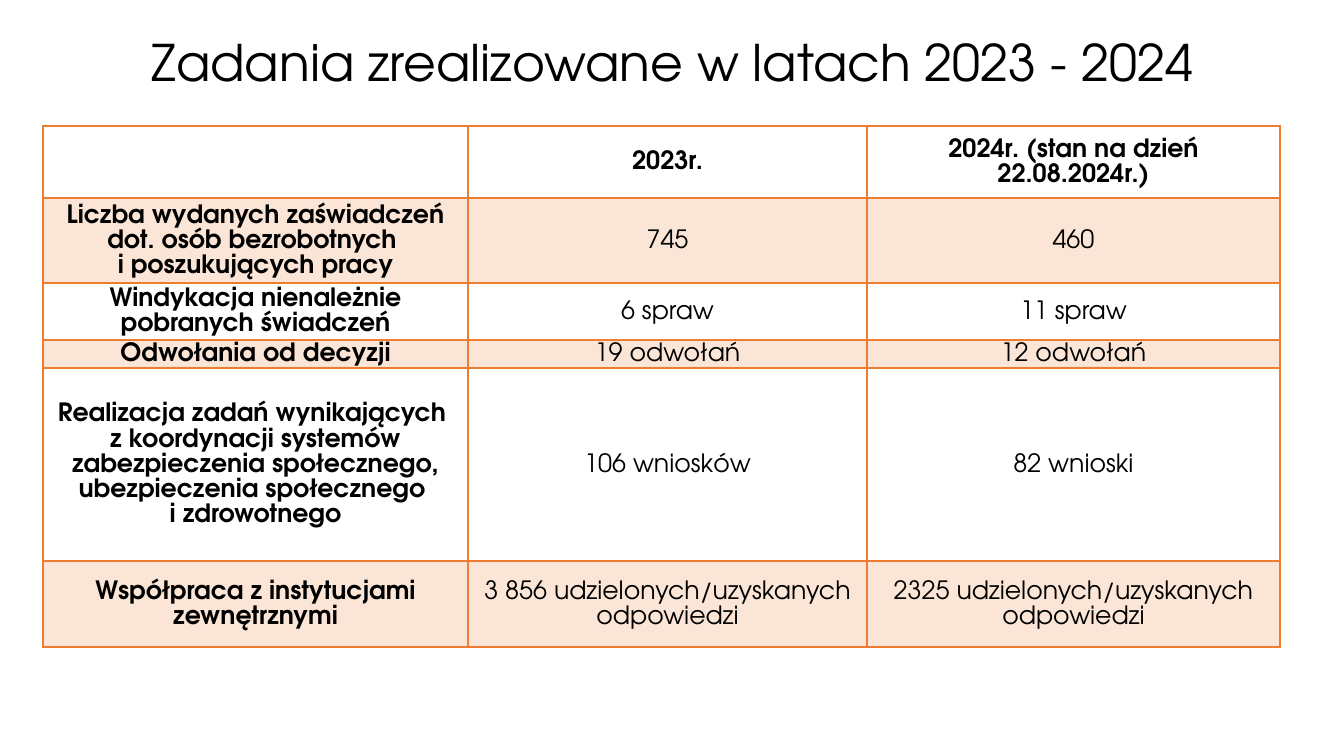
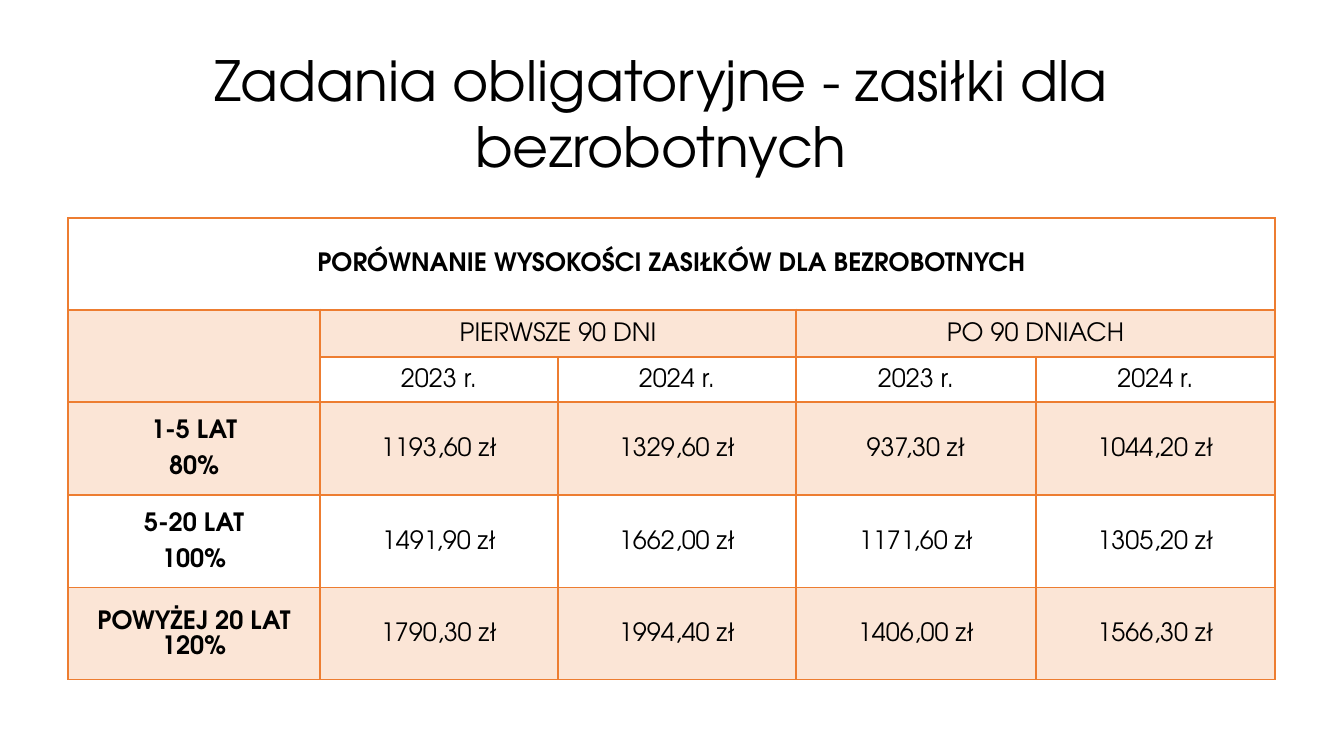
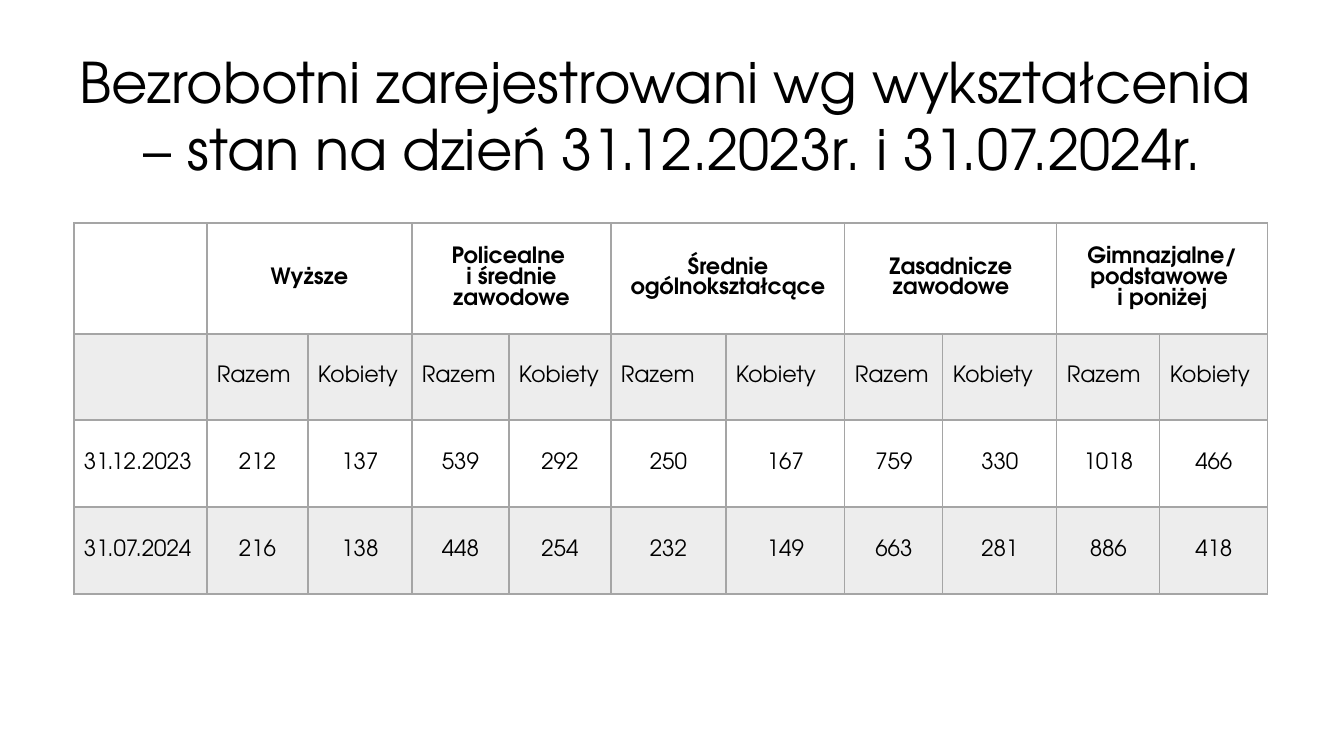
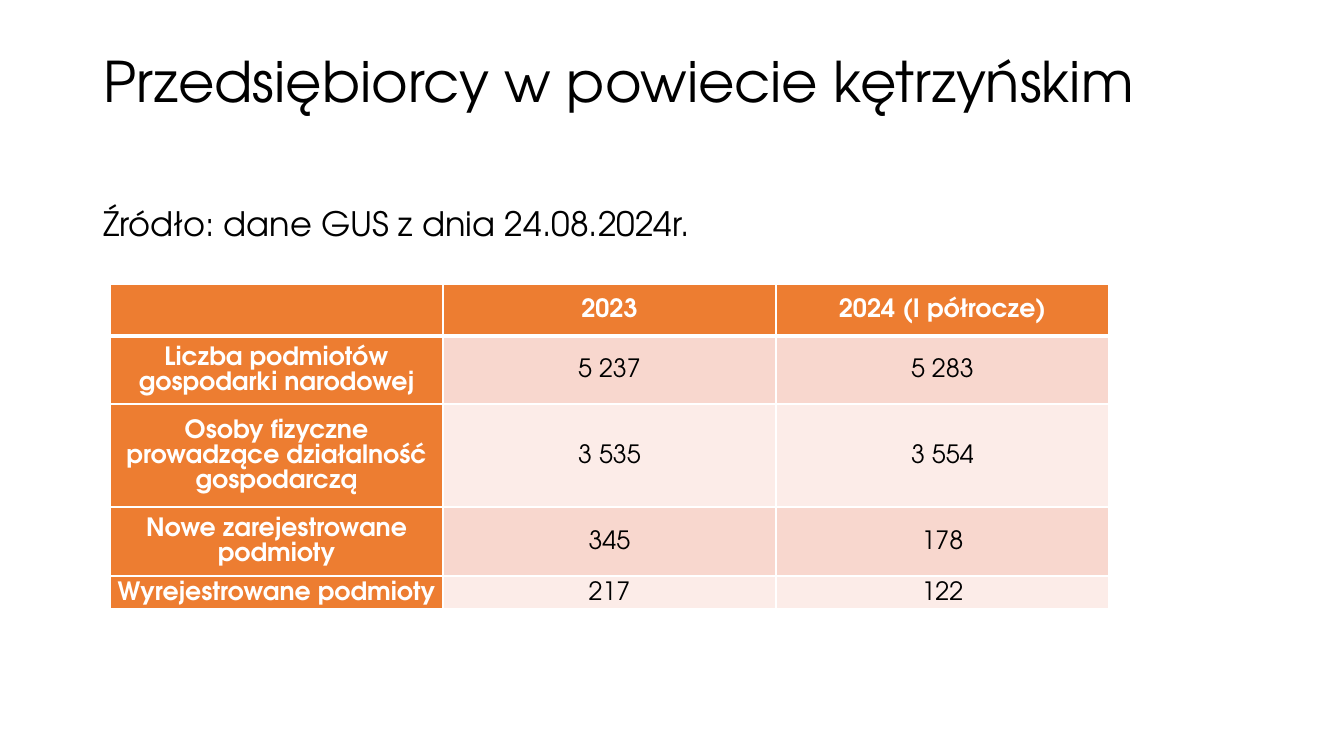
"""Builds four slides of tables about a county labour office."""
from dataclasses import dataclass

from lxml.etree import SubElement
from pptx import Presentation
from pptx.dml.color import RGBColor
from pptx.enum.text import MSO_ANCHOR as Anchor, MSO_AUTO_SIZE as AutoSize, PP_ALIGN as Align
from pptx.oxml import parse_xml
from pptx.oxml.ns import nsdecls, qn
from pptx.util import Emu, Pt


@dataclass(frozen=True)
class Theme:
    font: str = "TeX Gyre Adventor"
    ink: str = "000000"
    paper: str = "FFFFFF"
    orange: str = "ED7D31"
    orange_tint: str = "FBE5D6"
    gray: str = "A5A5A5"
    gray_tint: str = "EDEDED"
    rose: str = "F8D7CE"
    rose_tint: str = "FCECE8"
    title_leading: float = 1.19
    source_size: int = 24
    source_leading: int = 26
    rule: int = 1


THEME = Theme()
WIDTH, HEIGHT = 1344, 756
EMU_PER_PX = 914400 / 100.8
LAYOUT_BODY, LAYOUT_TITLE = 1, 5


@dataclass(frozen=True)
class Look:
    border: str
    bands: tuple
    header_rule: int = 2
    solid: str = ""
    size: int = 18
    leading: float = 18
    after: int = 8
    margins: tuple = (7, 0)
    bold_labels: bool = True
    left_aligned: bool = False


ORANGE_GRID = Look(THEME.orange, (THEME.orange_tint, None))
GRAY_GRID = Look(THEME.gray, (THEME.gray_tint, None), size=16, leading=14.7, after=0,
                 margins=(10, 5), bold_labels=False, left_aligned=True)
ORANGE_SOLID = Look(THEME.paper, (THEME.rose, THEME.rose_tint), header_rule=3, solid=THEME.orange)

SLIDES = [
    dict(
        title="Zadania zrealizowane w latach 2023 - 2024\v", title_size=36,
        title_box=(64, 65, 1217, 54), look=ORANGE_GRID, corner=(43, 126),
        columns=(425, 399, 413), heights=(72, 85, 57, 28, 193, 86),
        rows=[
            ("", "2023r.", "2024r. (stan na dzień 22.08.2024r.)"),
            ("Liczba wydanych zaświadczeń dot. osób bezrobotnych \vi poszukujących pracy", "745", "460"),
            ("Windykacja nienależnie pobranych świadczeń", "6 spraw", "11 spraw"),
            ("Odwołania od decyzji", "19 odwołań", "12 odwołań"),
            ("Realizacja zadań wynikających \vz koordynacji systemów zabezpieczenia społecznego, "
             "ubezpieczenia społecznego \vi zdrowotnego", "106 wniosków", "82 wnioski"),
            ("Współpraca z instytucjami zewnętrznymi", "3 856 udzielonych/uzyskanych odpowiedzi",
             "2325 udzielonych/uzyskanych odpowiedzi"),
        ],
    ),
    dict(
        title="Zadania obligatoryjne - zasiłki dla bezrobotnych", title_size=39.6,
        title_box=(34, 40, 1254, 146), look=ORANGE_GRID, corner=(68, 218),
        columns=(252, 238, 238, 240, 239), heights=(92, 47, 45, 93, 93, 92),
        merges=[(0, 0, 0, 4), (1, 0, 2, 0), (1, 1, 1, 2), (1, 3, 1, 4)],
        rows=[
            ("PORÓWNANIE WYSOKOŚCI ZASIŁKÓW DLA BEZROBOTNYCH", "", "", "", ""),
            ("", "PIERWSZE 90 DNI", "", "PO 90 DNIACH", ""),
            ("", "2023 r.", "2024 r.", "2023 r.", "2024 r."),
            ("1-5 LAT\n80%", "1193,60 zł", "1329,60 zł", "937,30 zł", "1044,20 zł"),
            ("5-20 LAT\n100%", "1491,90 zł", "1662,00 zł", "1171,60 zł", "1305,20 zł"),
            ("POWYŻEJ 20 LAT 120%", "1790,30 zł", "1994,40 zł", "1406,00 zł", "1566,30 zł"),
        ],
    ),
    dict(
        title="Bezrobotni zarejestrowani wg wykształcenia \v– stan na dzień 31.12.2023r. i 31.07.2024r.",
        title_size=40, title_box=(66, 42, 1214, 146), look=GRAY_GRID, corner=(74, 223),
        columns=(133, 101, 104, 97, 102, 115, 119, 98, 114, 103, 108), heights=(111, 86, 87, 87),
        merges=[(0, col, 0, col + 1) for col in range(1, 11, 2)],
        rows=[
            ("", "Wyższe", "", "Policealne \vi średnie zawodowe", "", "Średnie ogólnokształcące", "",
             "Zasadnicze zawodowe", "", "Gimnazjalne/ podstawowe \vi poniżej", ""),
            ("",) + ("Razem", "Kobiety") * 5,
            ("31.12.2023", "212", "137", "539", "292", "250", "167", "759", "330", "1018", "466"),
            ("31.07.2024", "216", "138", "448", "254", "232", "149", "663", "281", "886", "418"),
        ],
    ),
    dict(
        title="Przedsiębiorcy w powiecie kętrzyńskim", title_size=40, title_align=Align.LEFT,
        title_box=(93, 38, 1159, 84), look=ORANGE_SOLID, corner=(110, 284),
        source="Źródło: dane GUS z dnia 24.08.2024r.", source_box=(93, 202, 1159, 480),
        columns=(333, 333, 333), heights=(52, 68, 103, 69, 33),
        rows=[
            ("", "2023", "2024 (I półrocze)"),
            ("Liczba podmiotów gospodarki narodowej", "5 237", "5 283"),
            ("Osoby fizyczne prowadzące działalność gospodarczą", "3 535", "3 554"),
            ("Nowe zarejestrowane podmioty", "345", "178"),
            ("Wyrejestrowane podmioty", "217", "122"),
        ],
    ),
]


def px(length):
    return Emu(round(length * EMU_PER_PX))


def write(frame, text, size, leading, align, color=THEME.ink, bold=False, after=0):
    for index, line in enumerate(text.split("\n")):
        paragraph = frame.add_paragraph() if index else frame.paragraphs[0]
        paragraph.alignment = align
        paragraph.line_spacing = Pt(leading)
        paragraph.space_before, paragraph.space_after = Pt(0), Pt(after)
        for part_index, part in enumerate(line.split("\v")):
            if part_index:
                paragraph.add_line_break()
            if part:
                run = paragraph.add_run()
                run.text = part
                run.font.name, run.font.size, run.font.bold = THEME.font, Pt(size), bold
                run.font.color.rgb = RGBColor.from_string(color)


def fill_placeholder(placeholder, box, anchor, text, size, leading, align):
    placeholder.left, placeholder.top, placeholder.width, placeholder.height = map(px, box)
    frame = placeholder.text_frame
    frame.word_wrap, frame.auto_size, frame.vertical_anchor = True, AutoSize.NONE, anchor
    write(frame, text, size, leading, align)
    return frame


def add_source(slide, text, box):
    frame = fill_placeholder(slide.placeholders[1], box, Anchor.TOP, text,
                             THEME.source_size, THEME.source_leading, Align.LEFT)
    properties = frame.paragraphs[0]._p.get_or_add_pPr()
    properties.set("marL", "0")
    properties.set("indent", "0")
    SubElement(properties, qn("a:buNone"))


def draw_borders(cell, look, row):
    rules = {"L": THEME.rule, "R": THEME.rule,
             "T": look.header_rule if row == 1 else THEME.rule,
             "B": look.header_rule if row == 0 else THEME.rule}
    properties = cell._tc.get_or_add_tcPr()
    for side, width in rules.items():
        properties.append(parse_xml(
            f'<a:ln{side} {nsdecls("a")} w="{Pt(width)}"><a:solidFill>'
            f'<a:srgbClr val="{look.border}"/></a:solidFill></a:ln{side}>'))


def style_cell(cell, look, row, col, text):
    header, label = row == 0, col == 0
    solid = look.solid if header or label else ""
    draw_borders(cell, look, row)
    color = solid or (None if header else look.bands[(row - 1) % 2])
    if color:
        cell.fill.solid()
        cell.fill.fore_color.rgb = RGBColor.from_string(color)
    else:
        cell.fill.background()
    side, edge = map(px, look.margins)
    cell.margin_left = cell.margin_right = side
    cell.margin_top = cell.margin_bottom = edge
    cell.vertical_anchor = Anchor.MIDDLE
    left = look.left_aligned and (row == 1 or label)
    write(cell.text_frame, text, look.size, look.leading, Align.LEFT if left else Align.CENTER,
          THEME.paper if solid else THEME.ink, header or (label and look.bold_labels), look.after)


def add_grid(slide, look, corner, columns, heights, rows, merges=()):
    table = slide.shapes.add_table(len(rows), len(columns), *map(px, corner),
                                   px(sum(columns)), px(sum(heights))).table
    table.first_row = table.horz_banding = False
    for column, width in zip(table.columns, columns):
        column.width = px(width)
    for table_row, height in zip(table.rows, heights):
        table_row.height = px(height)
    for row, texts in enumerate(rows):
        for col, text in enumerate(texts):
            style_cell(table.cell(row, col), look, row, col, text)
    for top, left, bottom, right in merges:
        table.cell(top, left).merge(table.cell(bottom, right))


def main():
    deck = Presentation()
    deck.slide_width, deck.slide_height = px(WIDTH), px(HEIGHT)
    for content in SLIDES:
        source = content.get("source")
        slide = deck.slides.add_slide(deck.slide_layouts[LAYOUT_BODY if source else LAYOUT_TITLE])
        size = content["title_size"]
        fill_placeholder(slide.shapes.title, content["title_box"], Anchor.MIDDLE, content["title"],
                         size, size * THEME.title_leading, content.get("title_align", Align.CENTER))
        if source:
            add_source(slide, source, content["source_box"])
        add_grid(slide, content["look"], content["corner"], content["columns"],
                 content["heights"], content["rows"], content.get("merges", ()))
    deck.save("out.pptx")


if __name__ == "__main__":
    main()
